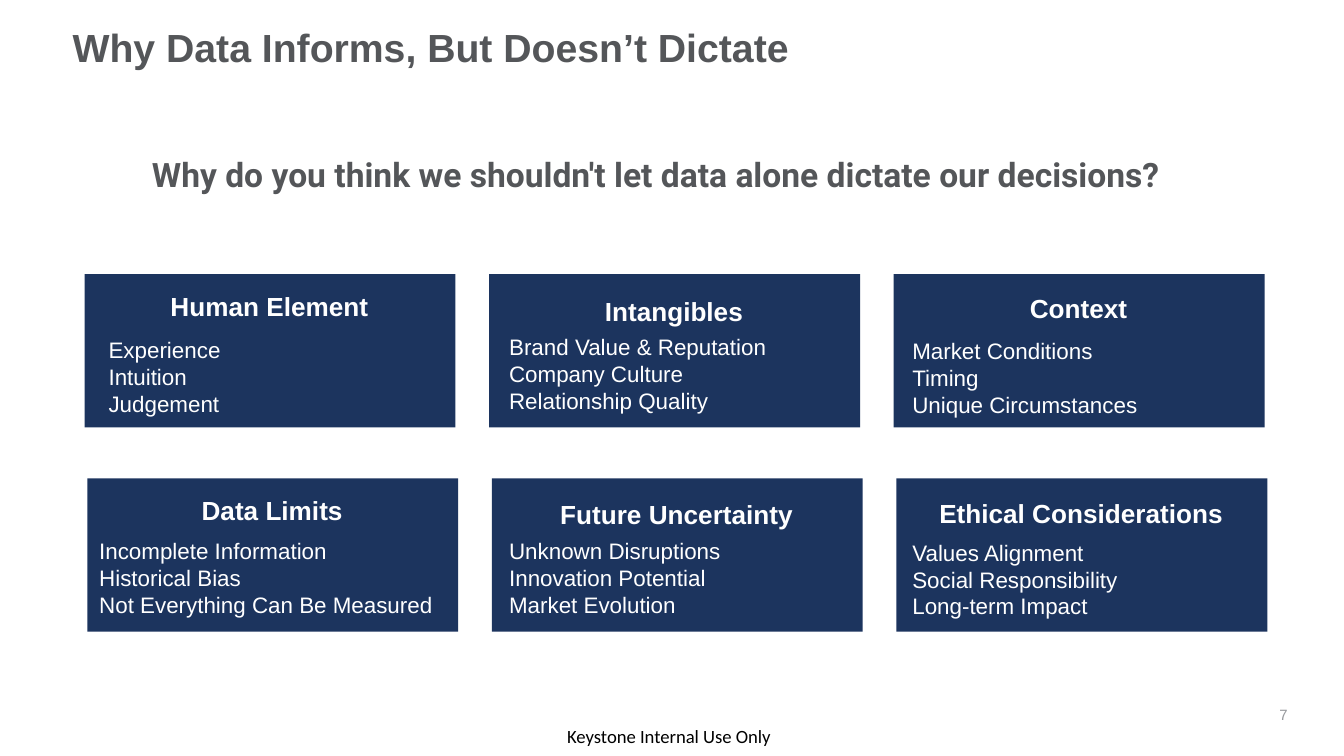
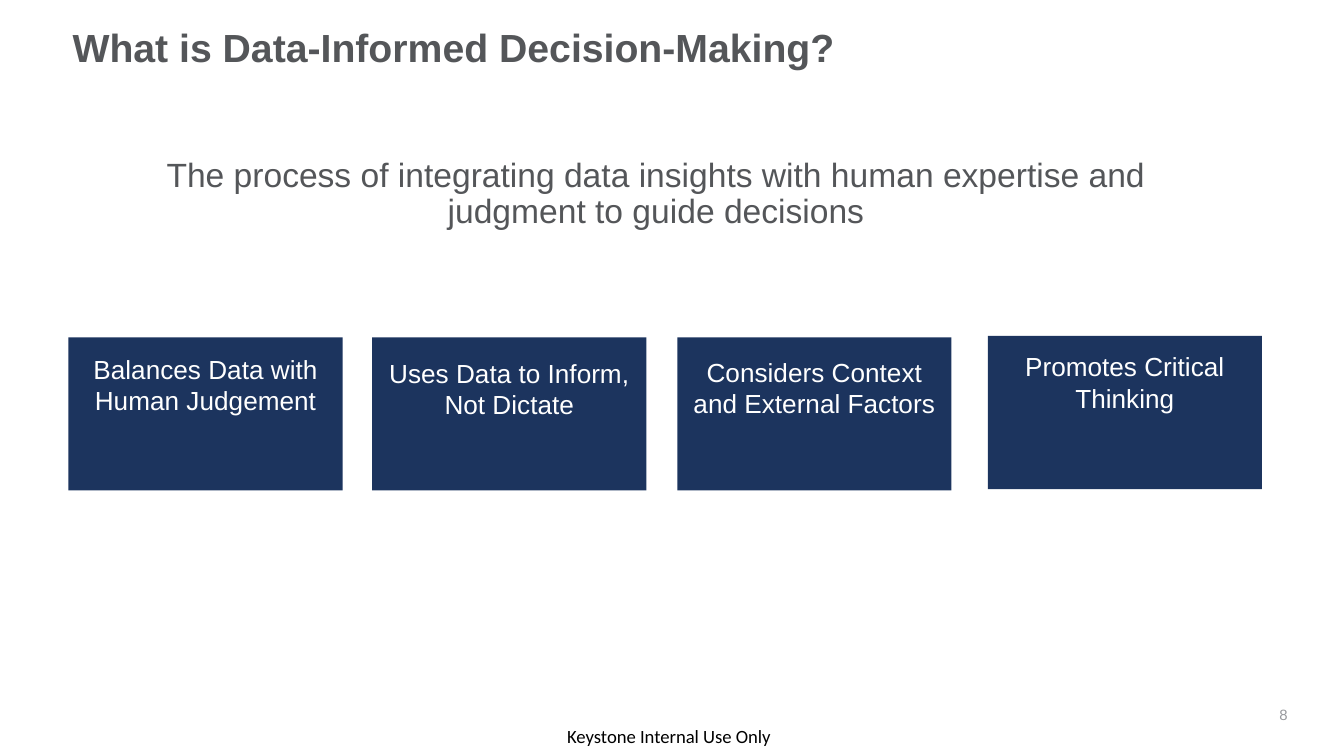
from pptx import Presentation
from pptx.dml.color import RGBColor
from pptx.enum.shapes import MSO_SHAPE
from pptx.enum.text import PP_ALIGN
from pptx.util import Inches, Pt

LEFT, CENTER, RIGHT = PP_ALIGN.LEFT, PP_ALIGN.CENTER, PP_ALIGN.RIGHT
RECT = MSO_SHAPE.RECTANGLE

COLORS = {
    "navy": "1C345E",
    "slate": "545659",
    "gray": "97999D",
    "white": "FFFFFF",
    "black": "000000",
}
FONT = "Arial"
FOOTER = "Keystone Internal Use Only"
CARD_H = 1.14
INSETS = (0.1, 0.05, 0.1, 0.05)
NO_INSETS = (0, 0, 0, 0)

# Reasons: heading, heading top, list left, list top, list items
REASON_ROWS = [
    (0.63, 2.04, [
        ("Human Element", 2.11, 0.71, 2.45,
         ["Experience", "Intuition", "Judgement"]),
        ("Intangibles", 2.15, 3.69, 2.43,
         ["Brand Value & Reputation", "Company Culture", "Relationship Quality"]),
        ("Context", 2.13, 6.69, 2.46,
         ["Market Conditions", "Timing", "Unique Circumstances"]),
    ]),
    (0.65, 3.56, [
        ("Data Limits", 3.63, 0.64, 3.95,
         ["Incomplete Information", "Historical Bias",
          "Not Everything Can Be Measured"]),
        ("Future Uncertainty", 3.66, 3.69, 3.95,
         ["Unknown Disruptions", "Innovation Potential", "Market Evolution"]),
        ("Ethical Considerations", 3.65, 6.69, 3.96,
         ["Values Alignment", "Social Responsibility", "Long-term Impact"]),
    ]),
]

# Principles: text, card left, card top, text top
PRINCIPLES = [
    ("Balances Data with Human Judgement", 0.51, 2.51, 2.58),
    ("Uses Data to Inform, Not Dictate", 2.77, 2.51, 2.61),
    ("Considers Context and External Factors", 5.04, 2.51, 2.6),
    ("Promotes Critical Thinking", 7.35, 2.5, 2.56),
]


def rgb(name):
    return RGBColor.from_string(COLORS[name])


def add_text(s, box, lines, size, color, bold=False, align=LEFT,
             font=FONT, insets=INSETS, wrap=True):
    """Add a text box with one paragraph per line."""
    tf = s.shapes.add_textbox(*map(Inches, box)).text_frame
    tf.word_wrap = wrap
    (tf.margin_left, tf.margin_top,
     tf.margin_right, tf.margin_bottom) = map(Inches, insets)
    for i, line in enumerate(lines):
        p = tf.add_paragraph() if i else tf.paragraphs[0]
        p.alignment = align
        r = p.add_run()
        r.text = line
        r.font.name = font
        r.font.size = Pt(size)
        r.font.bold = bold
        r.font.color.rgb = rgb(color)
    return tf


def add_card(s, x, y, w):
    sp = s.shapes.add_shape(RECT, *map(Inches, (x, y, w, CARD_H)))
    sp.shadow.inherit = False
    sp.fill.solid()
    sp.fill.fore_color.rgb = rgb("navy")
    sp.line.fill.background()


def add_lead(s, text, height, font=FONT, bold=False):
    """Add the centred statement under the title."""
    tf = add_text(s, (0.79, 1.13, 8.18, height), [text], 18, "slate",
                  bold=bold, align=CENTER, font=font)
    p = tf.paragraphs[0]
    p.line_spacing = 0.9
    p.space_after = Pt(3.8)


def add_slide(prs, title, number):
    """Add a slide with the shared footer, page number and title."""
    s = prs.slides.add_slide(prs.slide_layouts[6])
    add_text(s, (4.22, 5.39, 1.58, 0.17), [FOOTER], 10, "black",
             font="Calibri", insets=NO_INSETS)
    add_text(s, (9.39, 5.2, 0.19, 0.26), [str(number)], 8, "gray",
             align=RIGHT, insets=(0, 0.05, 0, 0.05))
    add_text(s, (0.54, 0.17, 9.33, 0.35), [title], 21, "slate",
             bold=True, insets=NO_INSETS)
    return s


def build_reasons(prs):
    s = add_slide(prs, "Why Data Informs, But Doesn’t Dictate", 7)
    add_lead(s, "Why do you think we shouldn't let data alone dictate our decisions?",
             0.37, font="Roboto", bold=True)
    for left, top, reasons in REASON_ROWS:
        for col, (heading, heading_y, list_x, list_y, items) in enumerate(reasons):
            x = left + col * 3.01
            add_card(s, x, top, 2.76)
            add_text(s, (x + 0.02, heading_y, 2.71, 0.34), [heading], 14, "white",
                     bold=True, align=CENTER)
            add_text(s, (list_x, list_y, 2.8, 0.71), items, 12, "white")


def build_definition(prs):
    s = add_slide(prs, "What is Data-Informed Decision-Making?", 8)
    add_lead(s, "The process of integrating data insights with human expertise "
                "and judgment to guide decisions", 0.65)
    for text, x, y, text_y in PRINCIPLES:
        add_card(s, x, y, 2.04)
        add_text(s, (x + 0.02, text_y, 2, 0.57), [text], 14, "white", align=CENTER)


def main():
    prs = Presentation()
    prs.slide_width = Inches(10)
    prs.slide_height = prs.slide_width * 9 // 16
    build_reasons(prs)
    build_definition(prs)
    prs.save("out.pptx")


if __name__ == "__main__":
    main()
